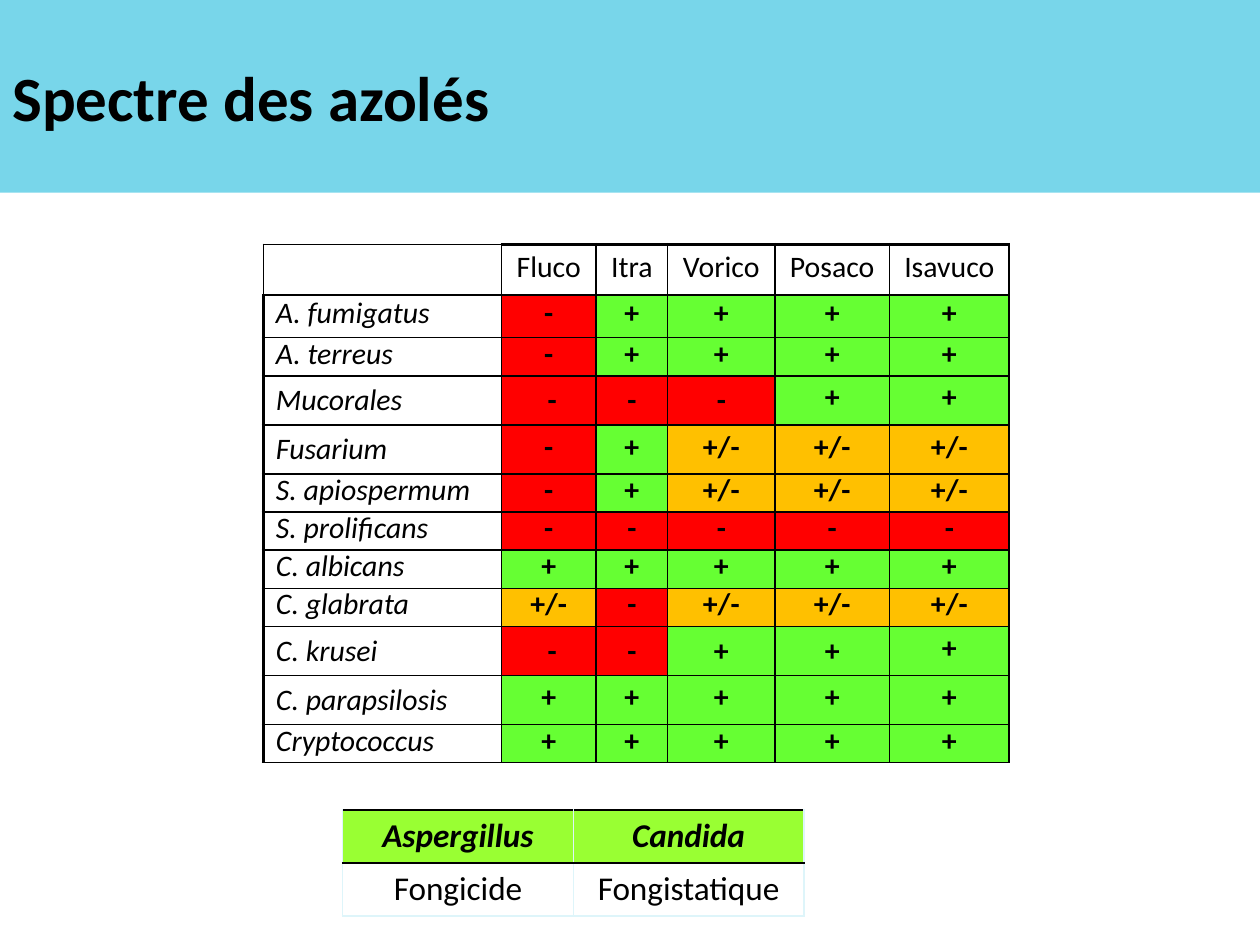
from dataclasses import dataclass, replace

from lxml.etree import SubElement
from pptx import Presentation
from pptx.dml.color import RGBColor
from pptx.enum.shapes import MSO_SHAPE
from pptx.enum.text import MSO_ANCHOR, PP_ALIGN
from pptx.oxml.ns import qn
from pptx.util import Inches, Pt

FONT = "Calibri"
BLACK, PALE = "000000", "DEF5FA"
RED, GREEN, ORANGE, LIME = "FF0000", "66FF33", "FFC000", "99FF33"
MARK_FILLS = {"-": RED, "+": GREEN, "+/-": ORANGE}
TIGHT_SPACING = 0.7
TIGHT_ROW, RELAXED_ROW = 0.3, 0.39
Border = tuple[str, float]
THIN: Border = (BLACK, 1)
THICK: Border = (BLACK, 2.25)
FAINT: Border = (PALE, 1)


@dataclass(frozen=True)
class CellStyle:
    size: float = 17
    bold: bool = False
    italic: bool = False
    align: PP_ALIGN = PP_ALIGN.CENTER
    anchor: MSO_ANCHOR = MSO_ANCHOR.MIDDLE
    line_spacing: float = 1.0
    space_before: float = 0
    fill: str | None = None
    left: Border = THIN
    right: Border = THIN
    top: Border = THIN
    bottom: Border = THIN


@dataclass(frozen=True)
class Organism:
    """A row of the spectrum; its first `relaxed` cells are single spaced."""
    name: str
    marks: tuple[str, ...]
    height: float = TIGHT_ROW
    relaxed: int = 0


DRUGS = ("Fluco", "Itra", "Vorico", "Posaco", "Isavuco")
ORGANISMS = (
    Organism("A. fumigatus", ("-", "+", "+", "+", "+"), 0.34),
    Organism("A. terreus", ("-", "+", "+", "+", "+")),
    Organism("Mucorales", (" -", "-", "-", "+", "+"), RELAXED_ROW, 4),
    Organism("Fusarium", ("-", "+", "+/-", "+/-", "+/-"), RELAXED_ROW, 1),
    Organism("S. apiospermum", ("-", "+", "+/-", "+/-", "+/-")),
    Organism("S. prolificans", ("-",) * 5),
    Organism("C. albicans", ("+",) * 5),
    Organism("C. glabrata", ("+/-", "-", "+/-", "+/-", "+/-")),
    Organism("C. krusei", (" -", "-", "+", "+", "+"), RELAXED_ROW, 5),
    Organism("C. parapsilosis", ("+",) * 5, RELAXED_ROW, 1),
    Organism("Cryptococcus", ("+",) * 5),
)
HEADER = CellStyle(line_spacing=TIGHT_SPACING, space_before=3.4, top=THICK)
NAME = CellStyle(italic=True, align=PP_ALIGN.LEFT, left=THICK)
MARK = CellStyle(bold=True)
ACTION = CellStyle(size=19, anchor=MSO_ANCHOR.TOP, space_before=4,
                   left=FAINT, right=FAINT, bottom=FAINT)
GENUS = replace(ACTION, bold=True, italic=True, fill=LIME, bottom=THIN)


def color(value: str) -> RGBColor:
    return RGBColor.from_string(value)


def draw_border(cell, tag: str, border: Border) -> None:
    line = SubElement(cell._tc.get_or_add_tcPr(), qn(tag), w=str(Pt(border[1])))
    SubElement(SubElement(line, qn("a:solidFill")), qn("a:srgbClr"), val=border[0])


def write_cell(cell, text: str, style: CellStyle) -> None:
    cell.vertical_anchor = style.anchor
    cell.margin_left = cell.margin_right = Inches(0.1)
    for tag, border in (("a:lnL", style.left), ("a:lnR", style.right),
                        ("a:lnT", style.top), ("a:lnB", style.bottom)):
        draw_border(cell, tag, border)
    if style.fill:
        cell.fill.solid()
        cell.fill.fore_color.rgb = color(style.fill)
    else:
        cell.fill.background()
    cell.text = text
    paragraph = cell.text_frame.paragraphs[0]
    paragraph.alignment = style.align
    paragraph.line_spacing = style.line_spacing
    paragraph.space_before = Pt(style.space_before)
    font = paragraph.font
    font.name, font.size = FONT, Pt(style.size)
    font.bold, font.italic = style.bold, style.italic
    font.color.rgb = color(BLACK)


def add_grid(slide, left: float, top: float, columns: list[float], rows: list[float],
             cells: list[list[tuple[str, CellStyle]]]) -> None:
    table = slide.shapes.add_table(
        len(rows), len(columns), Inches(left), Inches(top),
        Inches(sum(columns)), Inches(sum(rows))).table
    table.first_row = table.horz_banding = False
    for column, width in zip(table.columns, columns):
        column.width = Inches(width)
    for row, height, contents in zip(table.rows, rows, cells):
        row.height = Inches(height)
        for cell, (text, style) in zip(row.cells, contents):
            write_cell(cell, text, style)


def organism_cells(organism: Organism) -> list[tuple[str, CellStyle]]:
    styles = [NAME] + [replace(MARK, fill=MARK_FILLS[mark.strip()])
                       for mark in organism.marks]
    return [
        (text, style if index < organism.relaxed
         else replace(style, line_spacing=TIGHT_SPACING, space_before=3.4))
        for index, (text, style) in enumerate(zip((organism.name, *organism.marks), styles))
    ]


def add_title(slide, text: str) -> None:
    banner = slide.shapes.add_shape(MSO_SHAPE.RECTANGLE, 0, 0, Inches(10), Inches(1.53))
    banner.shadow.inherit = False
    banner.fill.solid()
    banner.fill.fore_color.rgb = color("78D6EA")
    banner.line.fill.background()
    frame = banner.text_frame
    frame.word_wrap = True
    frame.vertical_anchor = MSO_ANCHOR.MIDDLE
    frame.text = text
    paragraph = frame.paragraphs[0]
    paragraph.alignment = PP_ALIGN.LEFT
    font = paragraph.font
    font.name, font.size, font.bold = FONT, Pt(36), True
    font.color.rgb = color(BLACK)


def main() -> None:
    presentation = Presentation()
    presentation.slide_width, presentation.slide_height = Inches(10), Inches(7.5)
    slide = presentation.slides.add_slide(presentation.slide_layouts[6])
    add_title(slide, "Spectre des azolés")
    header = [("", CellStyle())] + [(drug, HEADER) for drug in DRUGS]
    add_grid(slide, 2.09, 1.94, [1.89, 0.75, 0.57, 0.85, 0.91, 0.95],
             [0.4] + [organism.height for organism in ORGANISMS],
             [header] + [organism_cells(organism) for organism in ORGANISMS])
    add_grid(slide, 2.72, 6.43, [1.83] * 2, [0.42] * 2,
             [[("Aspergillus", GENUS), ("Candida", GENUS)],
              [("Fongicide", ACTION), ("Fongistatique", ACTION)]])
    presentation.save("out.pptx")


if __name__ == "__main__":
    main()
